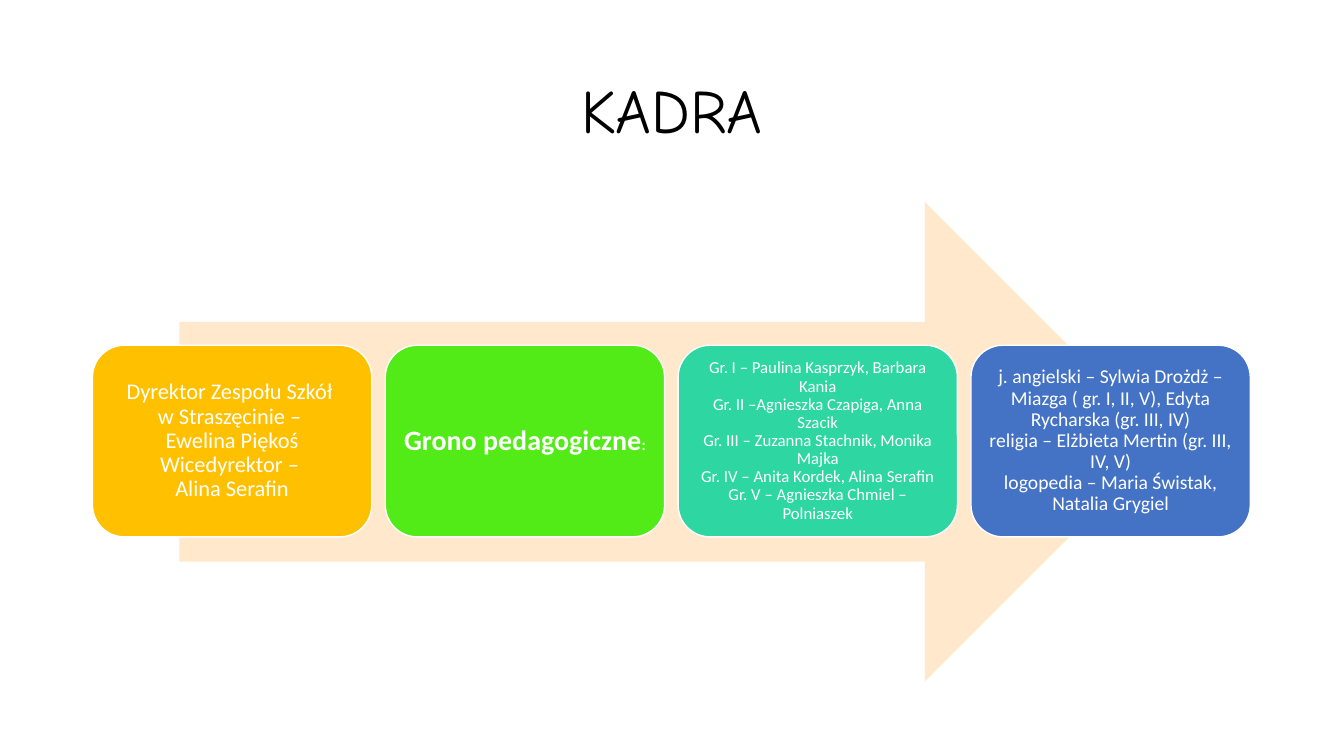
from copy import deepcopy

from pptx import Presentation
from pptx.dml.color import RGBColor
from pptx.enum.shapes import MSO_SHAPE
from pptx.enum.text import MSO_ANCHOR, PP_ALIGN
from pptx.util import Cm, Pt

ARROW = MSO_SHAPE.RIGHT_ARROW
CARD = MSO_SHAPE.ROUNDED_RECTANGLE
MIDDLE = MSO_ANCHOR.MIDDLE
CENTER = PP_ALIGN.CENTER

CARD_LEFT, CARD_TOP = 2.33, 8.7
CARD_WIDTH, CARD_HEIGHT = 7.04, 4.83
CARD_PITCH = 7.38

# Fill, inner margin in cm, then runs of (text, size, bold)
STAFF = [
    ("FFC000", 0.17, [(
        "Dyrektor Zespołu Szkół \nw Straszęcinie – \nEwelina Piękoś\n"
        "Wicedyrektor – \nAlina Serafin", 16, False)]),
    ("53EB17", 0.21, [("Grono pedagogiczne", 20, True), (":", 11, True)]),
    ("2ED7A1", 0.13, [(
        "Gr. I – Paulina Kasprzyk, Barbara Kania\n"
        "Gr. II –Agnieszka Czapiga, Anna Szacik\n"
        "Gr. III – Zuzanna Stachnik, Monika Majka\n"
        "Gr. IV – Anita Kordek, Alina Serafin\n"
        "Gr. V – Agnieszka Chmiel – Polniaszek", 12, False)]),
    ("4472C4", 0.15, [(
        "j. angielski – Sylwia Drożdż – Miazga ( gr. I, II, V), "
        "Edyta Rycharska (gr. III, IV)\n"
        "religia – Elżbieta Mertin (gr. III, IV, V)\n"
        "logopedia – Maria Świstak, Natalia Grygiel", 14, False)]),
]


def color(value):
    return RGBColor.from_string(value)


class StaffSlide:
    title_font = "Comic Neue"
    body_font = "Calibri"
    title_color = "000000"
    card_text_color = "FFFFFF"
    outline = "FFFFFF"

    def __init__(self, presentation):
        self.slide = presentation.slides.add_slide(presentation.slide_layouts[6])

    def fill_text(self, shape, runs, font_name, font_color, margin):
        """Centre the runs in the shape, with line breaks at newlines."""
        frame = shape.text_frame
        frame_format = {"word_wrap": True, "vertical_anchor": MIDDLE}
        for side in ("left", "right", "top", "bottom"):
            frame_format[f"margin_{side}"] = Cm(margin)
        for name, value in frame_format.items():
            setattr(frame, name, value)
        paragraph = frame.paragraphs[0]
        for name, value in {"alignment": CENTER, "line_spacing": 0.9}.items():
            setattr(paragraph, name, value)
        for text, size, bold in runs:
            run_format = {"name": font_name, "size": Pt(size), "bold": bold}
            for index, line in enumerate(text.split("\n")):
                if index:
                    # The break takes the text size of the line before it
                    paragraph.add_line_break()
                    paragraph._p[-1].append(deepcopy(run._r.rPr))
                run = paragraph.add_run()
                run.text = line
                for name, value in run_format.items():
                    setattr(run.font, name, value)
                run.font.color.rgb = color(font_color)

    def title(self, text, *box):
        heading = self.slide.shapes.add_textbox(*map(Cm, box))
        self.fill_text(heading, [(text, 44, False)], self.title_font,
                       self.title_color, 0.2)

    def shape(self, kind, fill, *box):
        shape = self.slide.shapes.add_shape(kind, *map(Cm, box))
        shape.shadow.inherit = False
        shape.fill.solid()
        shape.fill.fore_color.rgb = color(fill)
        return shape

    def arrow(self, fill, *box):
        self.shape(ARROW, fill, *box).line.fill.background()

    def card(self, fill, margin, runs, *box):
        card = self.shape(CARD, fill, *box)
        card.line.color.rgb = color(self.outline)
        card.line.width = Pt(1)
        self.fill_text(card, runs, self.body_font, self.card_text_color, margin)


def main():
    presentation = Presentation()
    presentation.slide_width = Cm(33.87)
    presentation.slide_height = Cm(19.05)
    slide = StaffSlide(presentation)
    slide.title("KADRA", 2.33, 1.01, 29.21, 3.68)
    slide.arrow("FFE8CC", 4.52, 5.09, 24.83, 12.08)
    for index, (fill, margin, runs) in enumerate(STAFF):
        slide.card(fill, margin, runs, CARD_LEFT + index * CARD_PITCH,
                   CARD_TOP, CARD_WIDTH, CARD_HEIGHT)
    presentation.save("out.pptx")


if __name__ == "__main__":
    main()
